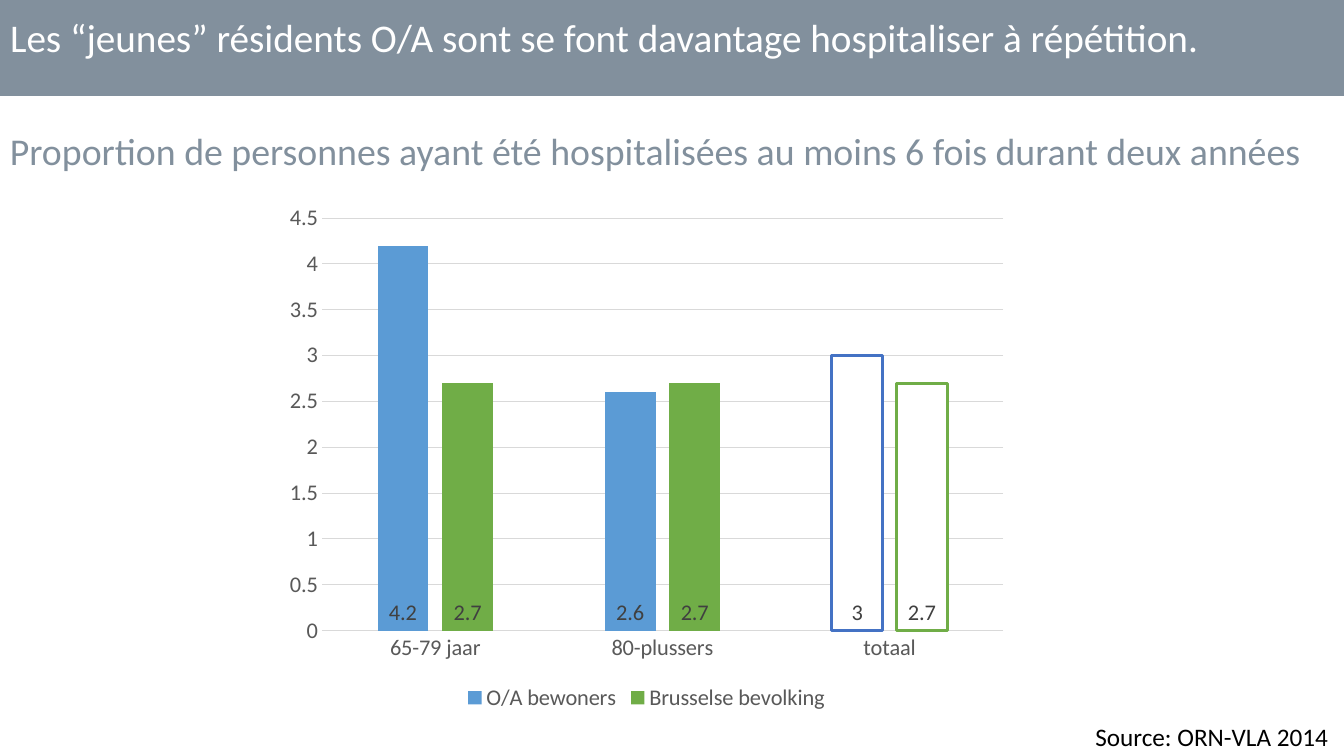
"""Build the slide on repeated hospital stays of young O/A residents."""
from dataclasses import dataclass

from pptx import Presentation
from pptx.chart.data import CategoryChartData
from pptx.dml.color import RGBColor
from pptx.enum.chart import (XL_CHART_TYPE as CT, XL_LABEL_POSITION as LP,
                             XL_LEGEND_POSITION as LEG, XL_TICK_MARK as TICK)
from pptx.enum.shapes import MSO_SHAPE as SHAPE
from pptx.enum.text import MSO_ANCHOR as ANCHOR, MSO_AUTO_SIZE as AUTO, PP_ALIGN as AL
from pptx.util import Emu, Pt

TITLE = "Les “jeunes” résidents O/A sont se font davantage hospitaliser à répétition."
SUBTITLE = "Proportion de personnes ayant été hospitalisées au moins 6 fois durant deux années"
SOURCE = "Source: ORN-VLA 2014"
CATEGORIES = ["65-79 jaar", "80-plussers", "totaal"]
SERIES = [
    {"name": "O/A bewoners", "values": (4.2, 2.6, 3), "fill": "5B9BD5", "outline": "4472C4"},
    {"name": "Brusselse bevolking", "values": (2.7, 2.7, 2.7), "fill": "70AD47", "outline": "70AD47"},
]
TOTAL = CATEGORIES.index("totaal")

SLIDE_W, SLIDE_H = 1344, 756
BOXES = {
    "band": (0, 0, SLIDE_W, 96),
    "title": (0, 8, SLIDE_W, 57),
    "subtitle": (0, 123, SLIDE_W, 56),
    "chart": (275, 194, 743, 522),
    "source": (618, 716, 720, 40),
}


@dataclass(frozen=True)
class Theme:
    """Fonts, colours and type sizes."""
    font: str = "Calibri"
    slate: str = "82909D"
    white: str = "FFFFFF"
    black: str = "000000"
    axis: str = "595959"
    label: str = "404040"
    grid: str = "D9D9D9"
    title: int = 28
    subtitle: int = 27
    source: int = 18
    chart: int = 16


T = Theme()


def px(n):
    """Turn px into EMU."""
    return Emu(round(n * 914400 / 100.8))


def box(name):
    """Return the place of a part in EMU."""
    return [px(n) for n in BOXES[name]]


def rgb(color):
    """Return a colour object."""
    return RGBColor.from_string(color)


def set_all(obj, **values):
    """Set each attribute given."""
    for key, value in values.items():
        setattr(obj, key, value)


def set_font(font, size, color):
    """Format a font."""
    set_all(font, name=T.font, size=Pt(size), bold=False)
    font.color.rgb = rgb(color)


def set_fill(fmt, color):
    """Give a format a solid fill."""
    fmt.fill.solid()
    fmt.fill.fore_color.rgb = rgb(color)


def set_line(line, color, width):
    """Format a line."""
    line.color.rgb = rgb(color)
    line.width = Pt(width)


def write(sp, text, size, color, align=AL.LEFT):
    """Put one formatted paragraph in a shape."""
    tf = sp.text_frame
    set_all(tf, word_wrap=True, auto_size=AUTO.NONE, vertical_anchor=ANCHOR.TOP)
    p = tf.paragraphs[0]
    p.alignment = align
    r = p.add_run()
    r.text = text
    set_font(r.font, size, color)


def add_bars(s):
    """Add the clustered column chart."""
    data = CategoryChartData()
    data.categories = CATEGORIES
    for item in SERIES:
        data.add_series(item["name"], item["values"])
    chart = s.shapes.add_chart(CT.COLUMN_CLUSTERED, *box("chart"), data).chart
    set_all(chart, has_title=False, has_legend=True)
    set_font(chart.font, T.chart, T.axis)
    set_all(chart.legend, position=LEG.BOTTOM, include_in_layout=False)
    set_font(chart.legend.font, T.chart, T.axis)

    cat, val = chart.category_axis, chart.value_axis
    for axis in (cat, val):
        set_all(axis, major_tick_mark=TICK.NONE, minor_tick_mark=TICK.NONE)
        set_font(axis.tick_labels.font, T.chart, T.axis)
    set_line(cat.format.line, T.grid, 0.75)
    set_all(val, minimum_scale=0, maximum_scale=4.5, major_unit=0.5)
    val.format.line.fill.background()
    set_line(val.major_gridlines.format.line, T.grid, 0.75)

    plot = chart.plots[0]
    set_all(plot, gap_width=219, overlap=-27, vary_by_categories=False)
    for series, item in zip(plot.series, SERIES):
        set_fill(series.format, item["fill"])
        series.invert_if_negative = False
        total = series.points[TOTAL].format
        set_fill(total, T.white)
        set_line(total.line, item["outline"], 2.25)
        labels = series.data_labels
        set_all(labels, show_value=True, position=LP.INSIDE_BASE)
        set_font(labels.font, T.chart, T.label)


def main():
    """Build and save the slide."""
    prs = Presentation()
    set_all(prs, slide_width=px(SLIDE_W), slide_height=px(SLIDE_H))
    s = prs.slides.add_slide(prs.slide_layouts[5])

    band = s.shapes.add_shape(SHAPE.RECTANGLE, *box("band"))
    band.shadow.inherit = False
    set_fill(band, T.slate)
    band.line.fill.background()

    title = s.shapes.title
    title.element.addprevious(band.element)
    set_all(title, **dict(zip(("left", "top", "width", "height"), box("title"))))
    write(title, TITLE, T.title, T.white)

    write(s.shapes.add_textbox(*box("subtitle")), SUBTITLE, T.subtitle, T.slate)
    add_bars(s)
    write(s.shapes.add_textbox(*box("source")), SOURCE, T.source, T.black, AL.RIGHT)
    prs.save("out.pptx")


if __name__ == "__main__":
    main()
